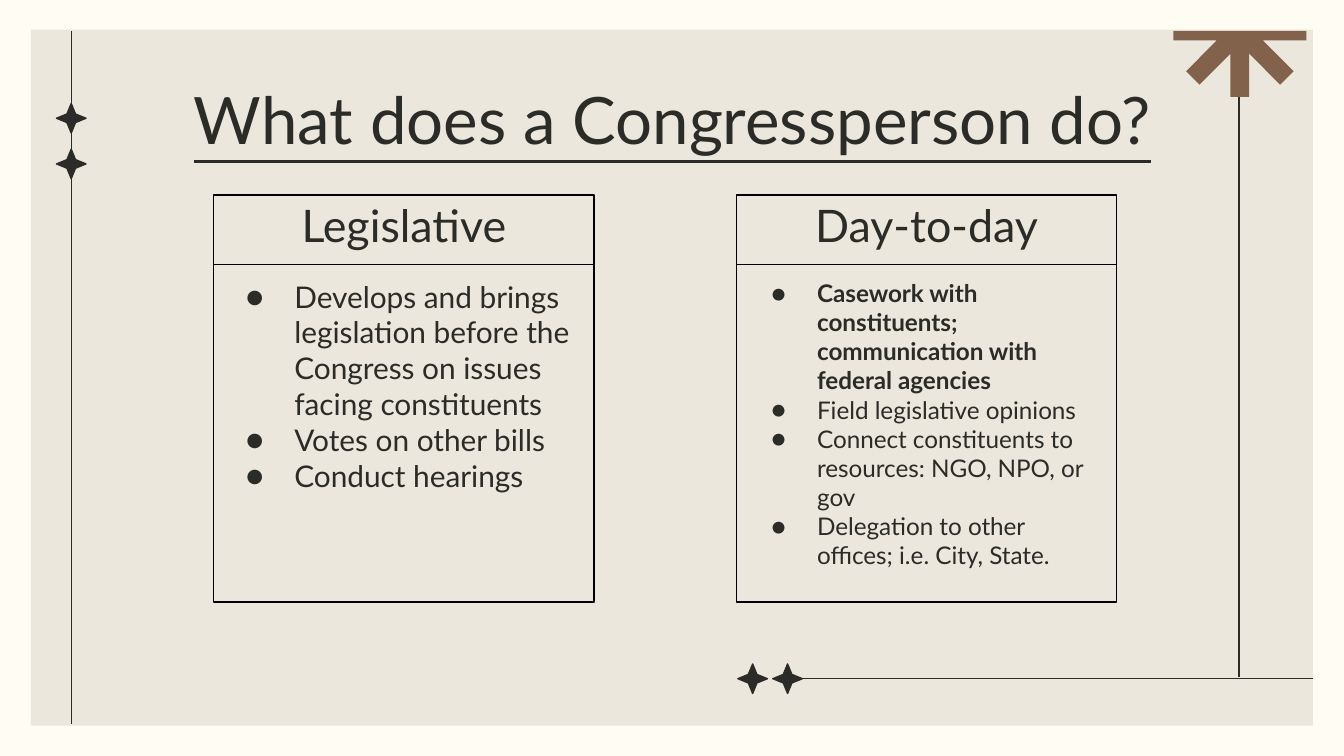
from lxml import etree
from pptx import Presentation
from pptx.dml.color import RGBColor
from pptx.enum.shapes import MSO_CONNECTOR, MSO_SHAPE
from pptx.enum.text import MSO_ANCHOR, MSO_AUTO_SIZE, PP_ALIGN
from pptx.oxml.ns import qn
from pptx.util import Inches, Pt

CREAM = RGBColor(0xFE, 0xFC, 0xF3)
SAND = RGBColor(0xEB, 0xE7, 0xDC)
INK = RGBColor(0x2B, 0x2B, 0x27)
BROWN = RGBColor(0x83, 0x62, 0x4B)
BLACK = RGBColor(0, 0, 0)
FONT = "Lato"
STAR_SIZE = 0.22
HEADING_HEIGHT = 0.52
COMPARISON_LAYOUT = 4

DUTIES = [
    ("Legislative", 16, 0.36, [
        ("Develops and brings legislation before the Congress on issues facing constituents", False),
        ("Votes on other bills", False),
        ("Conduct hearings", False),
    ]),
    ("Day-to-day", 13, 0.34, [
        ("Casework with constituents; communication with federal agencies", True),
        ("Field legislative opinions", False),
        ("Connect constituents to resources: NGO, NPO, or gov", False),
        ("Delegation to other offices; i.e. City, State.", False),
    ]),
]


def place(shape, left, top, width, height):
    shape.left, shape.top = Inches(left), Inches(top)
    shape.width, shape.height = Inches(width), Inches(height)


def paint(shape, fill, outline=None):
    shape.shadow.inherit = False
    shape.fill.solid()
    shape.fill.fore_color.rgb = fill
    if outline is None:
        shape.line.fill.background()
    else:
        shape.line.color.rgb = outline
        shape.line.width = Pt(0.75)


def add_rule(slide, x1, y1, x2, y2):
    rule = slide.shapes.add_connector(
        MSO_CONNECTOR.STRAIGHT, Inches(x1), Inches(y1), Inches(x2), Inches(y2))
    rule.line.color.rgb = INK
    rule.line.width = Pt(0.75)
    etree.SubElement(rule._element.spPr, qn("a:effectLst"))


def add_star(slide, center_x, center_y):
    star = slide.shapes.add_shape(
        MSO_SHAPE.STAR_4_POINT, Inches(center_x - STAR_SIZE / 2),
        Inches(center_y - STAR_SIZE / 2), Inches(STAR_SIZE), Inches(STAR_SIZE))
    star.adjustments[0] = 0.204
    paint(star, INK, INK)


def add_half_burst(slide, left, top, width):
    center = left + width / 2
    right_side = [(width / 2, 0), (width / 2, 0.07), (0.17, 0.07), (0.4, 0.3),
                  (0.3, 0.4), (0.07, 0.17), (0.07, 0.49)]
    left_side = [(-x, y) for x, y in reversed(right_side)]
    outline = [(Inches(center + x), Inches(top + y)) for x, y in right_side + left_side]
    builder = slide.shapes.build_freeform(*outline[0])
    builder.add_line_segments(outline[1:], close=True)
    paint(builder.convert_to_shape(), BROWN)


def add_frame(slide, left, top, width, height):
    panel = slide.shapes.add_shape(
        MSO_SHAPE.RECTANGLE, Inches(left), Inches(top), Inches(width), Inches(height))
    paint(panel, SAND)
    right, bottom = left + width, top + height
    spine, stem, baseline = left + 0.3, right - 0.55, bottom - 0.35
    add_rule(slide, stem, top + 0.01, stem, baseline - 0.01)
    add_half_burst(slide, right - 1.04, top + 0.01, 0.99)
    add_rule(slide, right, baseline, left + 5.61, baseline)
    for star_x in (5.63, 5.37):
        add_star(slide, left + star_x, baseline)
    add_rule(slide, spine, top + 0.01, spine, bottom - 0.01)
    for star_y in (0.66, 1.0):
        add_star(slide, spine, top + star_y)


def prepare_text(placeholder, anchor):
    frame = placeholder.text_frame
    frame.word_wrap = True
    frame.auto_size = MSO_AUTO_SIZE.NONE
    frame.vertical_anchor = anchor
    frame.margin_left = frame.margin_right = Inches(0.1)
    frame.margin_top = frame.margin_bottom = Inches(0.1)
    return frame


def format_paragraph(paragraph, size, align, bold=False, underline=False):
    paragraph.alignment = align
    paragraph.space_before = Pt(0)
    for run in paragraph.runs:
        run.font.name = FONT
        run.font.size = Pt(size)
        run.font.bold = bold
        run.font.underline = underline
        run.font.color.rgb = INK


def add_bullet(paragraph, hanging):
    properties = paragraph._p.get_or_add_pPr()
    properties.set("marL", str(Inches(0.5)))
    properties.set("indent", str(-Inches(hanging)))
    color = etree.SubElement(properties, qn("a:buClr"))
    etree.SubElement(color, qn("a:srgbClr"), val=str(INK))
    etree.SubElement(properties, qn("a:buFont"), typeface=FONT)
    etree.SubElement(properties, qn("a:buChar"), char="●")


def fill_title(title, left, top, width, height):
    place(title, left, top, width, height)
    frame = prepare_text(title, MSO_ANCHOR.TOP)
    frame.text = "What does a Congressperson do?"
    format_paragraph(frame.paragraphs[0], 35, PP_ALIGN.CENTER, underline=True)


def fill_duty_card(heading, duties, content, left, top, width, height):
    name, size, hanging, items = content
    place(heading, left, top, width, HEADING_HEIGHT)
    place(duties, left, top + HEADING_HEIGHT, width, height - HEADING_HEIGHT)
    for box in (heading, duties):
        box.line.color.rgb = BLACK
        box.line.width = Pt(0.75)

    heading_frame = prepare_text(heading, MSO_ANCHOR.BOTTOM)
    heading_frame.text = name
    format_paragraph(heading_frame.paragraphs[0], 24, PP_ALIGN.CENTER)

    duties_frame = prepare_text(duties, MSO_ANCHOR.TOP)
    duties_frame.text = "\n".join(text for text, bold in items)
    for paragraph, (text, bold) in zip(duties_frame.paragraphs, items):
        format_paragraph(paragraph, size, PP_ALIGN.LEFT, bold)
        add_bullet(paragraph, hanging)


def main():
    presentation = Presentation()
    presentation.slide_width = Inches(10)
    presentation.slide_height = Inches(10 * 9 / 16)
    slide = presentation.slides.add_slide(presentation.slide_layouts[COMPARISON_LAYOUT])
    slide.background.fill.solid()
    slide.background.fill.fore_color.rgb = CREAM

    add_frame(slide, 0.23, 0.22, 9.54, 5.18)
    for placeholder in list(slide.placeholders):
        placeholder._element.getparent().append(placeholder._element)

    title, *card_parts = slide.placeholders
    fill_title(title, 0.79, 0.49, 8.43, 0.63)
    for column, content in enumerate(DUTIES):
        heading, duties = card_parts[2 * column:2 * column + 2]
        fill_duty_card(heading, duties, content, 1.59 + 3.89 * column, 1.45, 2.83, 3.03)
    presentation.save("out.pptx")


if __name__ == "__main__":
    main()
